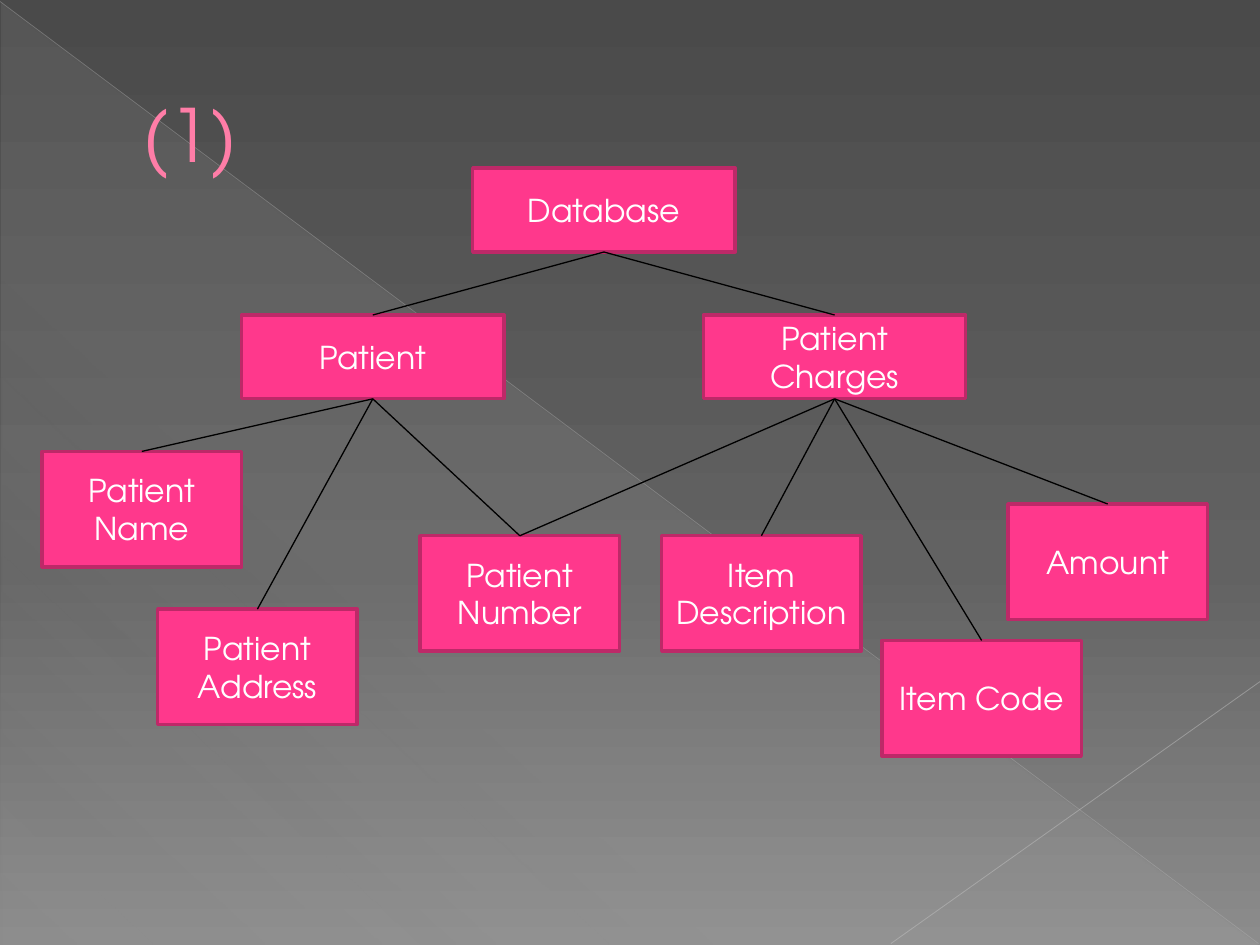
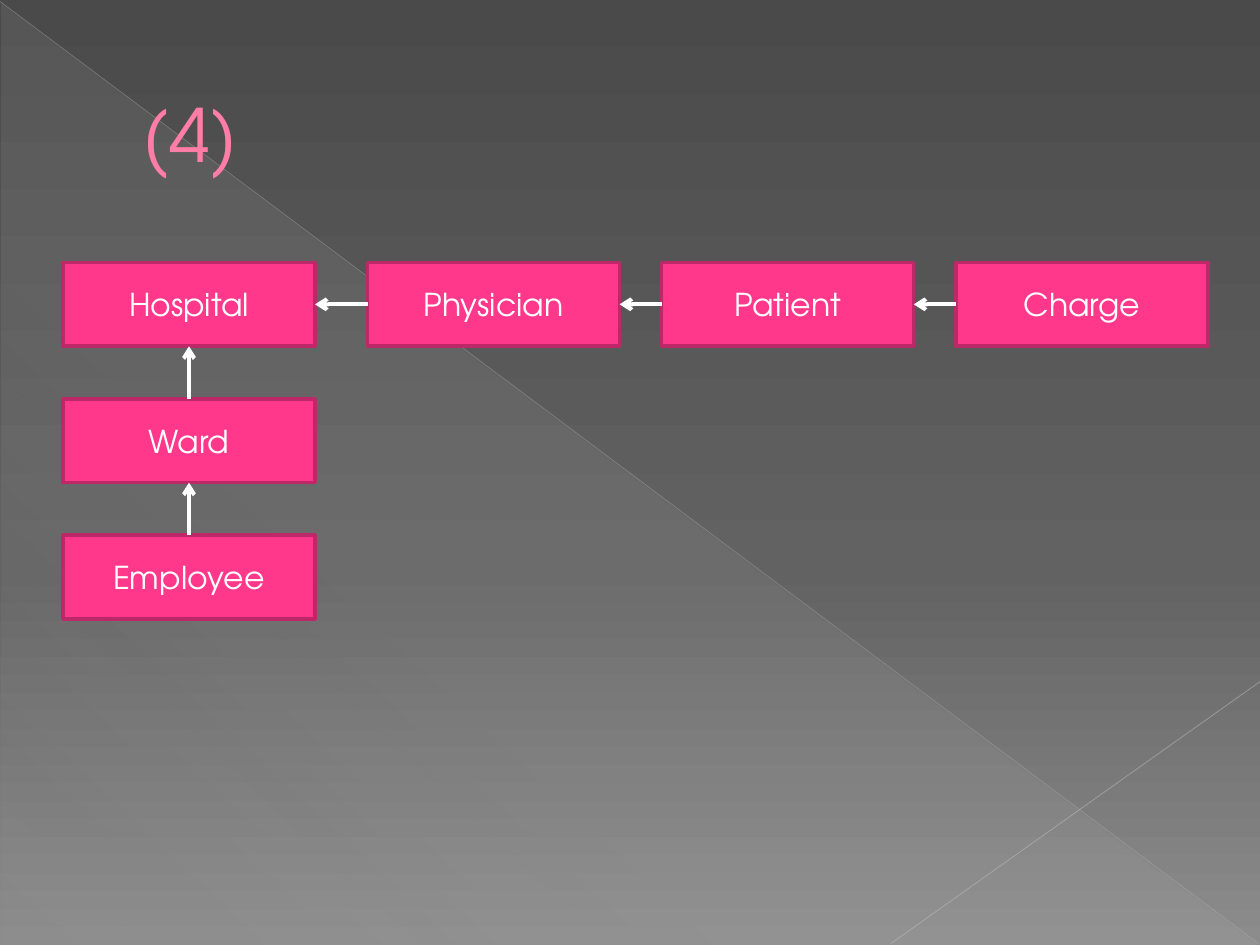
from lxml.etree import SubElement
from pptx import Presentation
from pptx.dml.color import RGBColor
from pptx.enum.shapes import MSO_CONNECTOR, MSO_SHAPE
from pptx.enum.text import MSO_ANCHOR, PP_ALIGN
from pptx.oxml import parse_xml
from pptx.oxml.ns import nsdecls, qn
from pptx.util import Cm, Pt

FONT = "TeX Gyre Adventor"
COLORS = {
    "box": "FF388C", "box_line": "BD2968", "title": "FF7DA7", "title_line": "B12761",
    "white": "FFFFFF", "black": "000000", "triangle": "D2D2D2",
    "long_line": "BFBFBF", "short_line": "C6C6C6",
    "bg_top": "4A4A4A", "bg_middle": "626262", "bg_bottom": "8C8C8C",
}
BACKGROUND = [(0, "bg_top", 100), (60, "bg_middle", 100), (100, "bg_bottom", 100)]
GLOW = [(0, "triangle", 10), (70, "triangle", 8), (100, "triangle", 1)]
DIAGONALS = [  # x1, y1, x2, y2 (cm), colour, width (pt), opacity (%)
    (0, 0.03, 25.37, 19.02, "long_line", 0.39, 35),
    (25.4, 13.74, 17.96, 19.02, "short_line", 0.47, 45),
]
TOP, LEFT, BOTTOM, RIGHT = range(4)  # connection sites of a rectangle

GROUP, FIELD, RECORD = (5.29, 1.69), (4.02, 2.33), (5.08, 1.69)  # box width, height
COL, ROW, STEP_X, STEP_Y = 1.27, 5.29, 5.93, 2.75
PATIENT_TREE = {
    "title": "(1)",
    "boxes": [
        ("Database", 9.53, 3.39, GROUP),
        ("Patient", 4.87, 6.35, GROUP),
        ("Patient Charges", 14.18, 6.35, GROUP),
        ("Patient Name", 0.85, 9.1, FIELD),
        ("Patient Address", 3.18, 12.28, FIELD),
        ("Patient Number", 8.47, 10.8, FIELD),
        ("Item Description", 13.34, 10.8, FIELD),
        ("Item Code", 17.78, 12.91, FIELD),
        ("Amount", 20.32, 10.16, FIELD),
    ],
    "links": [(parent, child, BOTTOM, TOP) for parent, children in {
        "Database": ["Patient", "Patient Charges"],
        "Patient": ["Patient Name", "Patient Number", "Patient Address"],
        "Patient Charges": ["Item Description", "Amount", "Item Code", "Patient Number"],
    }.items() for child in children],
    "link_style": ("black", 0.75, False),
}
HOSPITAL_LINKS = {
    "title": "(4)",
    "boxes": [(name, COL, ROW + i * STEP_Y, RECORD)
              for i, name in enumerate(["Hospital", "Ward", "Employee"])]
             + [(name, 7.41 + i * STEP_X, ROW, RECORD)
                for i, name in enumerate(["Physician", "Patient", "Charge"])],
    "links": [("Charge", "Patient", LEFT, RIGHT), ("Patient", "Physician", LEFT, RIGHT),
              ("Physician", "Hospital", LEFT, RIGHT),
              ("Ward", "Hospital", TOP, BOTTOM), ("Employee", "Ward", TOP, BOTTOM)],
    "link_style": ("white", 2.25, True),
}


def set_gradient(fill, element, stops, angle):
    """Give fill, which lives inside element, stops of (position, colour, opacity)."""
    fill.gradient()
    grad = next(element.iter(qn("a:gradFill")))
    xml = "".join(
        f'<a:gs pos="{pos * 1000}"><a:srgbClr val="{COLORS[color]}">'
        f'<a:alpha val="{opacity * 1000}"/></a:srgbClr></a:gs>'
        for pos, color, opacity in stops)
    new = parse_xml(f'<a:gradFill {nsdecls("a")} rotWithShape="1"><a:gsLst>{xml}</a:gsLst>'
                    f'<a:lin ang="{angle * 60000}" scaled="0"/></a:gradFill>')
    grad.getparent().replace(grad, new)


def add_line(s, x1, y1, x2, y2, color, width):
    line = s.shapes.add_connector(MSO_CONNECTOR.STRAIGHT, Cm(x1), Cm(y1), Cm(x2), Cm(y2))
    line.line.color.rgb = RGBColor.from_string(COLORS[color])
    line.line.width = Pt(width)
    SubElement(line._element.spPr, qn("a:effectLst"))
    return line


prs = Presentation()
prs.slide_width, prs.slide_height = Cm(25.4), Cm(19.05)

for diagram in (PATIENT_TREE, HOSPITAL_LINKS):
    s = prs.slides.add_slide(prs.slide_layouts[6])

    # Backdrop
    set_gradient(s.background.fill, s.element, BACKGROUND, 90)
    triangle = s.shapes.add_shape(MSO_SHAPE.RIGHT_TRIANGLE,
                                  Cm(0.03), Cm(0.05), Cm(25.35), Cm(19))
    triangle.shadow.inherit = False
    triangle.line.fill.background()
    set_gradient(triangle.fill, triangle._element, GLOW, 133)
    for *place, color, width, opacity in DIAGONALS:
        line = add_line(s, *place, color, width)
        rgb = next(line._element.spPr.iter(qn("a:srgbClr")))
        SubElement(rgb, qn("a:alpha"), val=str(opacity * 1000))

    # Title
    tb = s.shapes.add_textbox(Cm(1.27), Cm(0.74), Cm(22.86), Cm(3.89))
    tf = tb.text_frame
    tf.word_wrap = True
    tf.vertical_anchor = MSO_ANCHOR.MIDDLE
    p = tf.paragraphs[0]
    p.text = diagram["title"]
    p._p.get_or_add_pPr().set("marL", str(Cm(1.35)))
    r = p.runs[0]
    r.font.name, r.font.size = FONT, Pt(42)
    r.font.color.rgb = RGBColor.from_string(COLORS["title"])
    r._r.rPr.insert(0, parse_xml(
        f'<a:ln {nsdecls("a")} w="{Pt(0.5)}"><a:solidFill>'
        f'<a:srgbClr val="{COLORS["title_line"]}"/></a:solidFill></a:ln>'))

    # Boxes
    boxes = {}
    for name, x, y, (w, h) in diagram["boxes"]:
        sp = s.shapes.add_shape(MSO_SHAPE.RECTANGLE, Cm(x), Cm(y), Cm(w), Cm(h))
        sp.shadow.inherit = False
        sp.fill.solid()
        sp.fill.fore_color.rgb = RGBColor.from_string(COLORS["box"])
        sp.line.color.rgb = RGBColor.from_string(COLORS["box_line"])
        sp.line.width = Pt(2)
        tf = sp.text_frame
        tf.text = name
        tf.word_wrap = True
        tf.vertical_anchor = MSO_ANCHOR.MIDDLE
        p = tf.paragraphs[0]
        p.alignment = PP_ALIGN.CENTER
        r = p.runs[0]
        r.font.name, r.font.size = FONT, Pt(18)
        r.font.color.rgb = RGBColor.from_string(COLORS["white"])
        boxes[name] = sp

    # Links
    color, width, has_arrow = diagram["link_style"]
    for start, end, start_site, end_site in diagram["links"]:
        link = add_line(s, 0, 0, 1, 1, color, width)
        link.begin_connect(boxes[start], start_site)
        link.end_connect(boxes[end], end_site)
        if has_arrow:
            SubElement(link.line._get_or_add_ln(), qn("a:tailEnd"), type="arrow")

prs.save("out.pptx")
